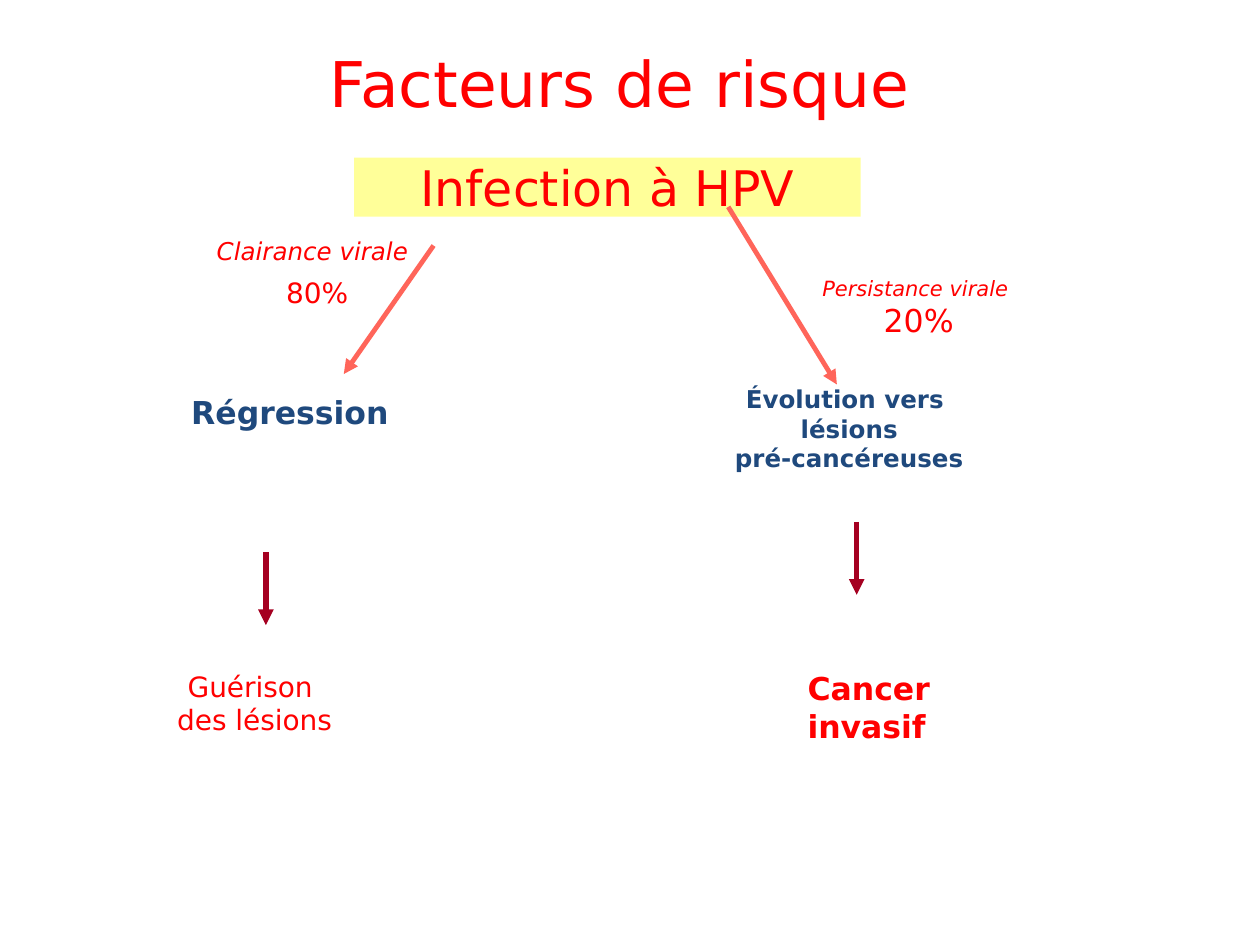
"""Build the slide on HPV risk factors and the two outcomes of infection."""
from lxml.etree import SubElement
from pptx import Presentation
from pptx.dml.color import RGBColor
from pptx.enum.shapes import MSO_CONNECTOR, MSO_SHAPE
from pptx.enum.text import MSO_ANCHOR, MSO_AUTO_SIZE, PP_ALIGN
from pptx.oxml.ns import qn
from pptx.util import Cm, Pt

COLORS = {"red": "FF0000", "navy": "1F497D", "yellow": "FFFF99",
          "coral": "FF655A", "crimson": "A50021"}
FONT = "DejaVu Sans"


def fill_text(frame, lines, color, align=PP_ALIGN.CENTER):
    frame.text = "\n".join(text for text, size, style in lines)
    for para, (text, size, style) in zip(frame.paragraphs, lines):
        para.alignment = align
        for span in para.runs:
            span.font.name = FONT
            span.font.size = Pt(size)
            span.font.bold = style == "bold"
            span.font.italic = style == "italic"
            span.font.color.rgb = RGBColor.from_string(COLORS[color])


def fit_frame(frame, wrap):
    frame.margin_left = frame.margin_right = 0
    frame.margin_top = frame.margin_bottom = 0
    frame.vertical_anchor = MSO_ANCHOR.TOP
    frame.word_wrap = wrap
    frame.auto_size = MSO_AUTO_SIZE.SHAPE_TO_FIT_TEXT


deck = Presentation()
deck.slide_width, deck.slide_height = Cm(25.4), Cm(19.05)
page = deck.slides.add_slide(deck.slide_layouts[5])

title = page.shapes.title
title.left, title.top, title.width, title.height = Cm(1.9), Cm(0.58), Cm(21.59), Cm(2.16)
title.text_frame.vertical_anchor = MSO_ANCHOR.MIDDLE
fill_text(title.text_frame, [("Facteurs de risque ", 36, "plain")], "red")

banner = page.shapes.add_shape(MSO_SHAPE.RECTANGLE, Cm(7.14), Cm(3.18), Cm(10.21), Cm(1.19))
banner.shadow.inherit = False
banner.fill.solid()
banner.fill.fore_color.rgb = RGBColor.from_string(COLORS["yellow"])
banner.line.fill.background()
fit_frame(banner.text_frame, True)
fill_text(banner.text_frame, [("Infection à HPV", 28, "plain")], "red")

labels = [
    (2.59, 7.92, 6.73, 0.76, True, "navy", PP_ALIGN.CENTER,
     [("Régression ", 18, "bold")]),
    (14.48, 7.75, 5.28, 1.8, True, "navy", PP_ALIGN.CENTER,
     [("Évolution vers ", 14, "bold"), (" lésions ", 14, "bold"),
      ("pré-cancéreuses", 14, "bold")]),
    (16.28, 13.49, 2.5, 1.55, False, "red", PP_ALIGN.LEFT,
     [("Cancer", 18, "bold"), ("invasif", 18, "bold")]),
    (5.77, 5.56, 1.35, 0.69, False, "red", PP_ALIGN.LEFT,
     [("80%", 16, "plain")]),
    (4.37, 4.75, 3.86, 0.61, False, "red", PP_ALIGN.CENTER,
     [("Clairance virale", 14, "italic")]),
    (15.88, 5.56, 5.28, 1.27, True, "red", PP_ALIGN.CENTER,
     [("Persistance virale ", 12, "italic"), ("20%", 18, "plain")]),
    (3.56, 13.49, 3.15, 1.37, False, "red", PP_ALIGN.CENTER,
     [("Guérison ", 16, "plain"), ("des lésions", 16, "plain")]),
]
for left, top, width, height, wrap, color, align, lines in labels:
    box = page.shapes.add_textbox(Cm(left), Cm(top), Cm(width), Cm(height))
    fit_frame(box.text_frame, wrap)
    fill_text(box.text_frame, lines, color, align)

arrows = [
    (8.74, 4.95, 6.93, 7.54, "coral", 2.75),
    (14.68, 4.17, 16.87, 7.75, "coral", 2.75),
    (5.36, 11.13, 5.36, 12.6, "crimson", 3),
    (17.27, 10.52, 17.27, 11.99, "crimson", 3),
]
for start_x, start_y, end_x, end_y, color, weight in arrows:
    arrow = page.shapes.add_connector(
        MSO_CONNECTOR.STRAIGHT, Cm(start_x), Cm(start_y), Cm(end_x), Cm(end_y))
    arrow.line.color.rgb = RGBColor.from_string(COLORS[color])
    arrow.line.width = Pt(weight)
    SubElement(arrow.get_or_add_ln(), qn("a:tailEnd"), type="triangle")
    SubElement(arrow._element.spPr, qn("a:effectLst"))

deck.save("out.pptx")
